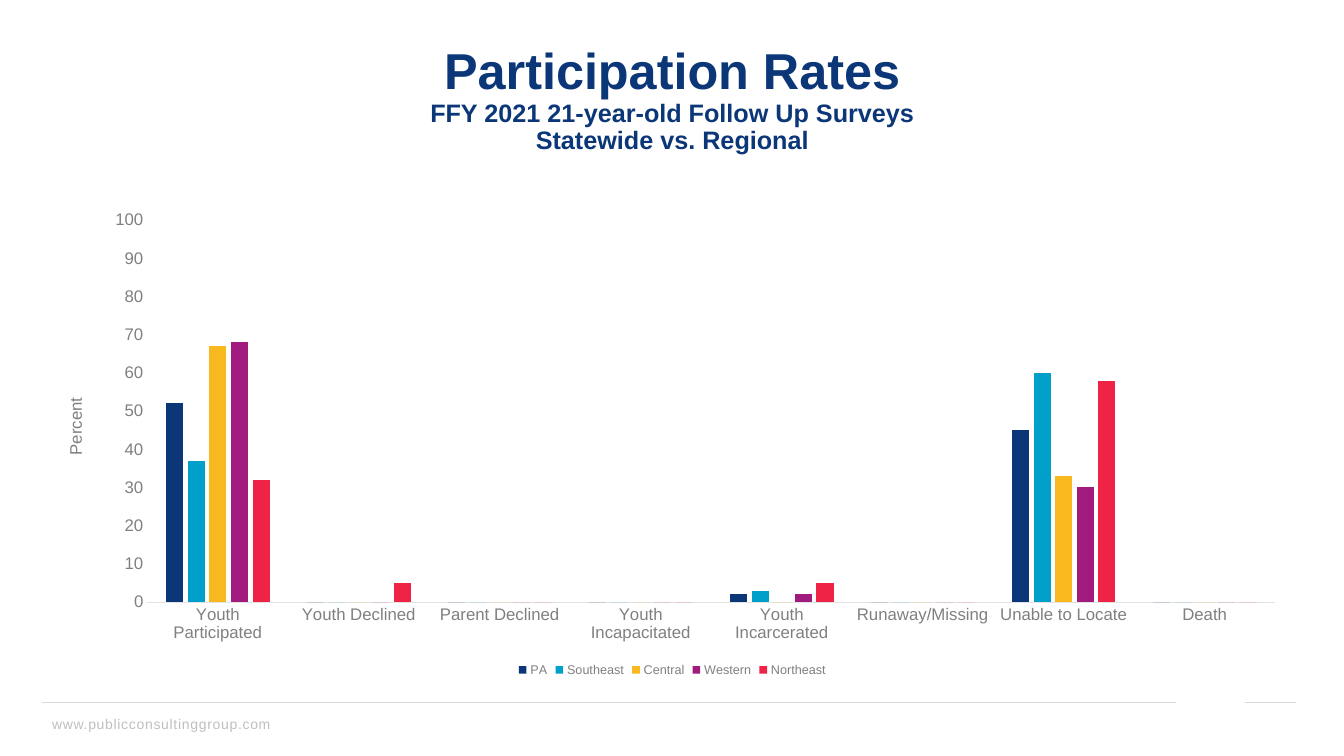
from pptx import Presentation
from pptx.chart.data import CategoryChartData
from pptx.dml.color import RGBColor
from pptx.enum import chart as c, shapes, text
from pptx.oxml.ns import qn
from pptx.util import Pt
from lxml import etree

# Content
TITLE_LINES = [
    ("Participation Rates", 36),
    ("FFY 2021 21-year-old Follow Up Surveys", 18),
    ("Statewide vs. Regional", 18),
]
FOOTER = "www.publicconsultinggroup.com"
VALUE_TITLE = "Percent"
OUTCOMES = ["Youth Participated", "Youth Declined", "Parent Declined",
            "Youth Incapacitated", "Youth Incarcerated", "Runaway/Missing",
            "Unable to Locate", "Death"]

NAVY = RGBColor(0x0B, 0x36, 0x77)
CYAN = RGBColor(0x00, 0xA0, 0xCA)
GOLD = RGBColor(0xFA, 0xB8, 0x1F)
PURPLE = RGBColor(0xA1, 0x1B, 0x7E)
RED = RGBColor(0xEE, 0x23, 0x46)
DARK = RGBColor(0x3B, 0x3B, 0x3B)
GREY = RGBColor(0x80, 0x80, 0x80)
FOOTER_GREY = RGBColor(0xBF, 0xBF, 0xBF)
RULE_GREY = RGBColor(0xD9, 0xD9, 0xD9)
AXIS_GREY = RGBColor(0xE2, 0xE2, 0xE2)

REGIONS = [
    ("PA", NAVY, [52, 0, 0, 0, 2, 0, 45, 0]),
    ("Southeast", CYAN, [37, 0, 0, 0, 3, 0, 60, 0]),
    ("Central", GOLD, [67, 0, 0, 0, 0, 0, 33, 0]),
    ("Western", PURPLE, [68, 0, 0, 0, 2, 0, 30, 0]),
    ("Northeast", RED, [32, 5, 0, 0, 5, 0, 58, 0]),
]

# Layout in points
LEFT, WIDTH = 31.7, 897.1
RULE_Y = 501.8
RULES = [(30.2, 840.2), (889.2, 925.9)]


def set_font(font, size, color, bold=False):
    font.name = "Arial"
    font.size = Pt(size)
    font.bold = bold
    font.color.rgb = color


deck = Presentation()
deck.slide_width, deck.slide_height = Pt(960), Pt(540)
page = deck.slides.add_slide(deck.slide_layouts[5])

# Footer address and rules
box = page.shapes.add_textbox(Pt(30.2), Pt(507.6), Pt(278.6), Pt(20.2))
box.text_frame.word_wrap = True
para = box.text_frame.paragraphs[0]
span = para.add_run()
span.text = FOOTER
set_font(span.font, 10, FOOTER_GREY)
span.font._element.set("spc", "50")

for start, end in RULES:
    rule = page.shapes.add_connector(shapes.MSO_CONNECTOR.STRAIGHT,
                                     Pt(start), Pt(RULE_Y), Pt(end), Pt(RULE_Y))
    rule.line.color.rgb = RULE_GREY
    rule.line.width = Pt(0.5)
    etree.SubElement(rule._element.spPr, qn("a:effectLst"))

# Title, raised a little by a deep bottom inset
title = page.shapes.title
title.left, title.top, title.width, title.height = Pt(LEFT), Pt(28.8), Pt(WIDTH), Pt(104.4)
frame = title.text_frame
frame.word_wrap = True
frame.auto_size = text.MSO_AUTO_SIZE.NONE
frame.vertical_anchor = text.MSO_ANCHOR.MIDDLE
frame.margin_bottom = Pt(22)
frame.text = "\n".join(line for line, _ in TITLE_LINES)
for para, (_, size) in zip(frame.paragraphs, TITLE_LINES):
    para.alignment = text.PP_ALIGN.CENTER
    para.line_spacing = 0.9
    set_font(para.font, size, NAVY, bold=True)

# Clustered columns
data = CategoryChartData(number_format="0")
data.categories = OUTCOMES
for name, _, rates in REGIONS:
    data.add_series(name, rates)
chart = page.shapes.add_chart(c.XL_CHART_TYPE.COLUMN_CLUSTERED, Pt(LEFT), Pt(144),
                              Pt(WIDTH), Pt(342.7), data).chart
set_font(chart.font, 10, DARK)
chart.has_title = False
plot = chart.plots[0]
plot.gap_width, plot.overlap = 219, -27
plot.vary_by_categories = False
for series, (_, color, _) in zip(plot.series, REGIONS):
    series.format.fill.solid()
    series.format.fill.fore_color.rgb = color
    series.invert_if_negative = False

# Axes
for axis in (chart.category_axis, chart.value_axis):
    axis.major_tick_mark = axis.minor_tick_mark = c.XL_TICK_MARK.NONE
    axis.has_major_gridlines = False
    set_font(axis.tick_labels.font, 12, GREY)
chart.category_axis.format.line.color.rgb = AXIS_GREY
chart.category_axis.format.line.width = Pt(0.75)
rate_axis = chart.value_axis
rate_axis.format.line.fill.background()
rate_axis.minimum_scale, rate_axis.maximum_scale, rate_axis.major_unit = 0, 100, 10
rate_axis.axis_title.text_frame.text = VALUE_TITLE
set_font(rate_axis.axis_title.text_frame.paragraphs[0].font, 12, GREY)

# Legend
chart.has_legend = True
chart.legend.position = c.XL_LEGEND_POSITION.BOTTOM
chart.legend.include_in_layout = False
set_font(chart.legend.font, 9, GREY)

deck.save("out.pptx")
